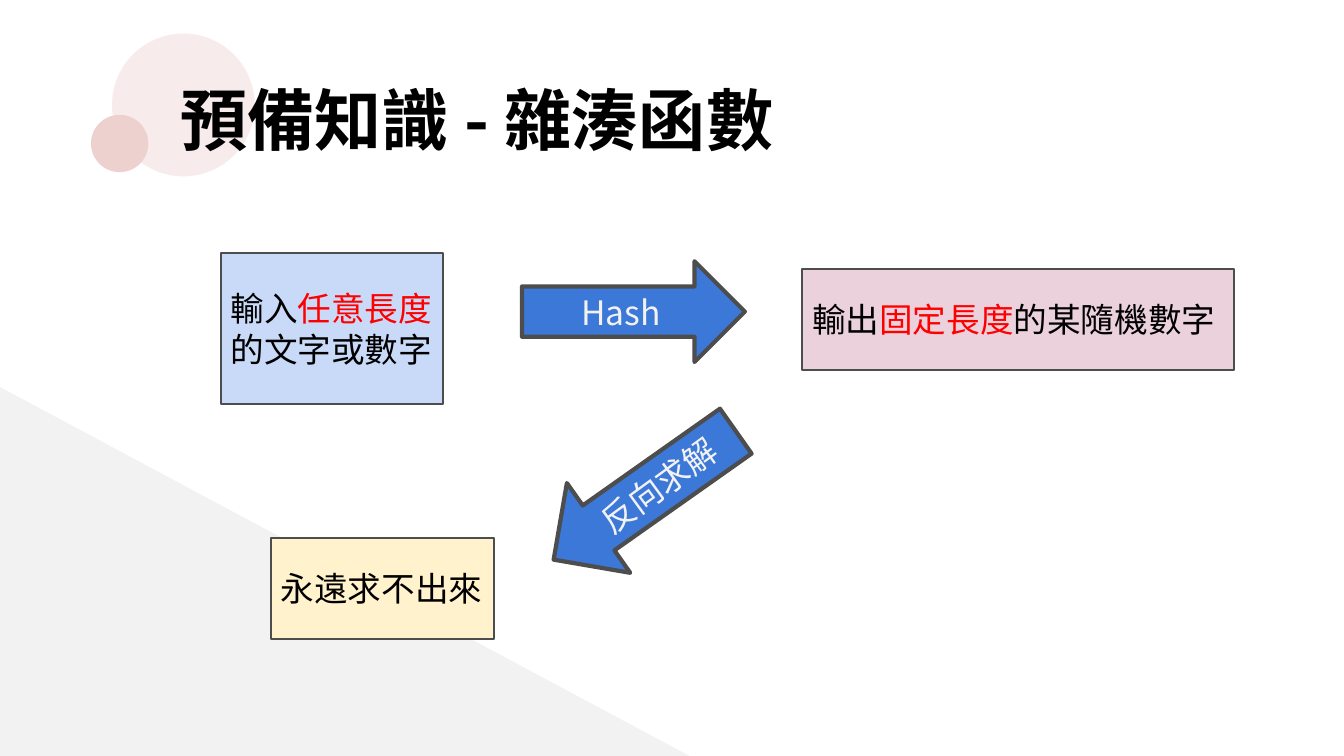
"""Build the hash function background slide."""
from lxml import etree
from pptx import Presentation
from pptx.dml.color import RGBColor
from pptx.enum.shapes import MSO_SHAPE
from pptx.enum.text import MSO_ANCHOR, PP_ALIGN
from pptx.oxml.ns import qn
from pptx.util import Pt

ELLIPSE, BOX, ARROW = MSO_SHAPE.OVAL, MSO_SHAPE.RECTANGLE, MSO_SHAPE.RIGHT_ARROW
LEFT, CENTER = PP_ALIGN.LEFT, PP_ALIGN.CENTER
TOP, MIDDLE = MSO_ANCHOR.TOP, MSO_ANCHOR.MIDDLE

THEME = {
    "font": "Noto Sans CJK TC", "title_size": 48, "body_size": 24,
    "ink": "000000", "accent": "FF0000", "light": "F2F2F2", "outline": "4D4D4D",
    "corner": "F2F2F2", "large_dot": "F6E8E7", "small_dot": "EDD1CF",
    "input": "C9DAF8", "output": "EAD1DC", "answer": "FFF2CC", "arrow": "3C78D8",
}
SLIDE_SIZE = (960, 540)
CORNER = [(0, 276.5), (492.5, 540), (0, 540)]
DOTS = [
    ((80, 24, 102, 102), "large_dot", 80),
    ((65, 82, 41, 41), "small_dot", 100),
]
TITLE = ((125.2, 52.5, 693, 74), [("預備知識 - 雜湊函數", "ink")])
BOXES = [
    ((157.6, 180.7, 159.2, 108), "input",
     [("輸入", "ink"), ("任意長度", "accent"), ("的文字或數字", "ink")]),
    ((573, 192.2, 308.4, 72), "output",
     [("輸出", "ink"), ("固定長度", "accent"), ("的某隨機數字", "ink")]),
    ((193.4, 384.4, 159.2, 72), "answer", [("永遠求不出來", "ink")]),
]
ARROWS = [
    ((372.9, 186.6, 159.2, 72), 0, [("Hash", "light")]),
    ((380.9, 314.6, 159.2, 78.5), 144.8, []),
]
REVERSE_LABEL = ((415.4, 320.4, 124.6, 47.5), 323.9, [("反向求解", "light")])


def color(name):
    return RGBColor.from_string(THEME[name])


def write(shape, runs, size, align=LEFT, anchor=MIDDLE, inset=7.2):
    frame = shape.text_frame
    frame.word_wrap = True
    frame.vertical_anchor = anchor
    frame.margin_left = frame.margin_right = Pt(inset)
    frame.margin_top = frame.margin_bottom = Pt(inset)
    paragraph = frame.paragraphs[0]
    paragraph.alignment = align
    for text, ink in runs:
        run = paragraph.add_run()
        run.text = text
        run.font.name = THEME["font"]
        run.font.size = Pt(THEME[size])
        run.font.bold = size == "title_size"
        run.font.color.rgb = color(ink)
        east_asian = etree.Element(qn("a:ea"), typeface=THEME["font"])
        run.font._element.find(qn("a:latin")).addnext(east_asian)


def paint(shape, fill, line_width=0):
    shape.shadow.inherit = False
    shape.fill.solid()
    shape.fill.fore_color.rgb = color(fill)
    if line_width:
        shape.line.color.rgb = color("outline")
        shape.line.width = Pt(line_width)
    else:
        shape.line.fill.background()


def add_shape(slide, kind, bounds, fill, line_width=0):
    shape = slide.shapes.add_shape(kind, *map(Pt, bounds))
    paint(shape, fill, line_width)
    return shape


def add_label(slide, bounds, runs, size, inset, rotation=0):
    label = slide.shapes.add_textbox(*map(Pt, bounds))
    label.rotation = rotation
    write(label, runs, size, anchor=TOP, inset=inset)


def add_backdrop(slide):
    start, *corners = [(Pt(x), Pt(y)) for x, y in CORNER]
    builder = slide.shapes.build_freeform(*start)
    builder.add_line_segments(corners, close=True)
    paint(builder.convert_to_shape(), "corner")
    for bounds, fill, opacity in DOTS:
        dot = add_shape(slide, ELLIPSE, bounds, fill)
        if opacity < 100:
            tint = dot._element.spPr.find(".//" + qn("a:srgbClr"))
            etree.SubElement(tint, qn("a:alpha"), val=str(opacity * 1000))


def main():
    presentation = Presentation()
    presentation.slide_width, presentation.slide_height = map(Pt, SLIDE_SIZE)
    slide = presentation.slides.add_slide(presentation.slide_layouts[6])
    add_backdrop(slide)
    add_label(slide, *TITLE, "title_size", 3.6)
    for bounds, fill, runs in BOXES:
        write(add_shape(slide, BOX, bounds, fill, 1.5), runs, "body_size")
    for bounds, rotation, runs in ARROWS:
        arrow = add_shape(slide, ARROW, bounds, "arrow", 3)
        arrow.rotation = rotation
        write(arrow, runs, "body_size", CENTER)
    bounds, rotation, runs = REVERSE_LABEL
    add_label(slide, bounds, runs, "body_size", 7.2, rotation)
    presentation.save("out.pptx")


if __name__ == "__main__":
    main()
